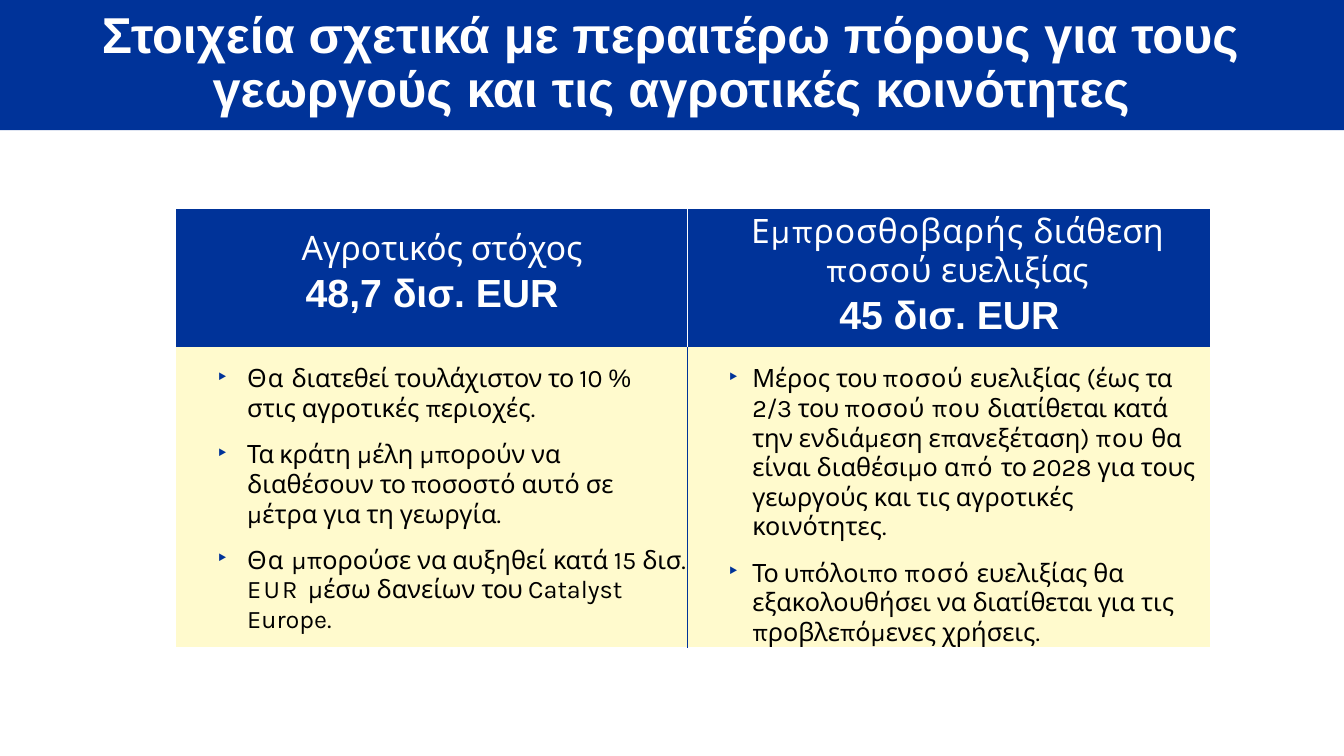
from itertools import groupby

from lxml import etree
from pptx import Presentation
from pptx.dml.color import RGBColor
from pptx.enum.shapes import MSO_SHAPE
from pptx.enum.text import MSO_ANCHOR, MSO_AUTO_SIZE, PP_ALIGN
from pptx.oxml.ns import qn
from pptx.util import Pt

RECTANGLE = MSO_SHAPE.RECTANGLE
TOP = MSO_ANCHOR.TOP
NO_AUTOFIT = MSO_AUTO_SIZE.NONE
LEFT, CENTER = PP_ALIGN.LEFT, PP_ALIGN.CENTER

COLORS = {"blue": "003399", "cream": "FFFACD", "white": "FFFFFF", "black": "000000"}
HEADING_FONT, BODY_FONT = "Arial", "Karla"
NO_TABLE_STYLE = "{2D5ABB26-0587-4C30-8999-92F81FD0307C}"

# Letter spacing in points of single words set in the body font
TRACKING = {
    "Θα": 0.8, "Τα": -0.6, "Το": -0.7, "το": -0.8, "του": -0.5, "τα": -0.6,
    "τους": -0.2, "τη": -0.2, "την": -0.2, "κατά": -0.2, "2/3": -0.2,
    "ποσού": 0.5, "ποσό": 0.7, "που": 0.6, "από": 0.8, "διατίθεται": -0.3,
    "διατεθεί": -0.2, "τουλάχιστον": -0.2, "δισ.": -0.2, "EUR": 1.6,
    "Εμπροσθοβαρής": 0.7, "%": -0.5,
}

TITLE = ("Στοιχεία σχετικά με περαιτέρω πόρους για τους "
         "γεωργούς και τις αγροτικές κοινότητες")

RURAL_TARGET = [
    "Θα διατεθεί τουλάχιστον το 10 %",
    "στις αγροτικές περιοχές.",
    "Τα κράτη μέλη μπορούν να διαθέσουν το ποσοστό αυτό σε μέτρα για τη γεωργία.",
    "Θα μπορούσε να αυξηθεί κατά 15 δισ. EUR μέσω δανείων του Catalyst Europe.",
]
FLEXIBILITY_AMOUNT = [
    "Μέρος του ποσού ευελιξίας (έως τα 2/3 του ποσού που διατίθεται κατά την "
    "ενδιάμεση επανεξέταση) που θα είναι διαθέσιμο από το 2028 για τους γεωργούς "
    "και τις αγροτικές κοινότητες.",
    "Το υπόλοιπο ποσό ευελιξίας θα εξακολουθήσει να διατίθεται για τις "
    "προβλεπόμενες χρήσεις.",
]


def rgb(color):
    return RGBColor.from_string(COLORS[color])


class SlideBuilder:
    def __init__(self, width, height):
        self.deck = Presentation()
        self.deck.slide_width, self.deck.slide_height = Pt(width), Pt(height)
        self.slide = self.deck.slides.add_slide(self.deck.slide_layouts[5])

    def band(self, width, height):
        """Add a blue band along the top, behind everything else."""
        band = self.slide.shapes.add_shape(RECTANGLE, 0, 0, Pt(width), Pt(height))
        band.shadow.inherit = False
        band.fill.solid()
        band.fill.fore_color.rgb = rgb("blue")
        band.line.fill.background()
        self.slide.shapes._spTree.insert(2, band._element)

    def title(self, text, left, top, width, height):
        title = self.slide.shapes.title
        title.left, title.top = Pt(left), Pt(top)
        title.width, title.height = Pt(width), Pt(height)
        frame = title.text_frame
        frame.word_wrap, frame.auto_size = True, NO_AUTOFIT
        frame.vertical_anchor = TOP
        frame.margin_left = frame.margin_right = frame.margin_bottom = 0
        frame.margin_top = Pt(5.8)
        self.paragraph(frame, text, 36, "white", HEADING_FONT,
                       margin=137.5, indent=-79.2, line=38.9)

    def table(self, left, top, widths, heights):
        frame = self.slide.shapes.add_table(
            len(heights), len(widths), Pt(left), Pt(top),
            Pt(sum(widths)), Pt(sum(heights)))
        table = frame.table
        table.first_row = table.horz_banding = False
        table._tbl.tblPr.find(qn("a:tableStyleId")).text = NO_TABLE_STYLE
        for column, width in zip(table.columns, widths):
            column.width = Pt(width)
        for row, height in zip(table.rows, heights):
            row.height = Pt(height)
        return table

    def cell(self, cell, fill, margin_top, borders):
        """Format a cell; borders maps side letters, in L R T B order, to colours."""
        cell.margin_left = cell.margin_right = cell.margin_bottom = 0
        cell.margin_top = Pt(margin_top)
        cell.vertical_anchor = TOP
        properties = cell._tc.get_or_add_tcPr()
        for side, color in borders.items():
            line = etree.SubElement(properties, qn(f"a:ln{side}"), w=str(Pt(1)))
            solid = etree.SubElement(line, qn("a:solidFill"))
            etree.SubElement(solid, qn("a:srgbClr"), val=COLORS[color])
        cell.fill.solid()
        cell.fill.fore_color.rgb = rgb(fill)
        return cell.text_frame

    def paragraph(self, frame, text, size, color, font, margin=0, indent=0,
                  line=None, before=0, align=LEFT, bullet=False):
        first = frame.paragraphs[0]
        paragraph = frame.add_paragraph() if first.runs else first
        properties = paragraph._p.get_or_add_pPr()
        properties.set("marL", str(Pt(margin)))
        properties.set("indent", str(Pt(indent)))
        if bullet:
            bullet_color = etree.SubElement(properties, qn("a:buClr"))
            etree.SubElement(bullet_color, qn("a:srgbClr"), val=COLORS["blue"])
            etree.SubElement(properties, qn("a:buSzPct"), val="83000")
            etree.SubElement(properties, qn("a:buChar"), char="‣")
        paragraph.alignment = align
        paragraph.space_before = Pt(before)
        paragraph.line_spacing = Pt(line) if line else 1.0
        self.runs(paragraph, text, size, color, font)

    def runs(self, paragraph, text, size, color, font):
        """Split the text into runs of equal font and letter spacing."""
        def style(word):
            if font == HEADING_FONT:
                return font, 0
            return HEADING_FONT if word == "%" else font, TRACKING.get(word, 0)

        groups = [(key, " ".join(words)) for key, words in groupby(text.split(), style)]
        for number, ((face, tracking), words) in enumerate(groups, 1):
            run = paragraph.add_run()
            run.text = words if number == len(groups) else words + " "
            run.font.name, run.font.size = face, Pt(size)
            run.font.bold = font == HEADING_FONT
            run.font.color.rgb = rgb(color)
            run._r.get_or_add_rPr().set("spc", str(round(tracking * 100)))

    def bullets(self, frame, items, margin, hanging, continuations=()):
        """Add a bulleted list; continuations are items that carry no bullet."""
        for number, item in enumerate(items):
            bullet = item not in continuations
            self.paragraph(frame, item, 18, "black", BODY_FONT, margin=margin,
                           indent=-hanging if bullet else 0, bullet=bullet,
                           before=12 if bullet and number else 0)


def main():
    builder = SlideBuilder(960, 540)
    builder.band(960, 92.9)
    builder.title(TITLE, 14.4, 0.7, 931, 84.2)

    table = builder.table(125.5, 149, widths=(365.8, 373.7), heights=(98.6, 213.8))
    rural_head = builder.cell(table.cell(0, 0), "blue", 14.4,
                              {"L": "white", "R": "white", "T": "white"})
    builder.paragraph(rural_head, "Αγροτικός στόχος", 24, "white", BODY_FONT,
                      margin=90, line=28.7)
    builder.paragraph(rural_head, "48,7 δισ. EUR", 28, "white", HEADING_FONT,
                      margin=92.9, line=33.5)

    flexibility_head = builder.cell(table.cell(0, 1), "blue", 2.9,
                                    {"L": "white", "R": "white", "T": "white"})
    builder.paragraph(flexibility_head, "Εμπροσθοβαρής διάθεση ποσού ευελιξίας", 24,
                      "white", BODY_FONT, margin=11.5, align=CENTER)
    builder.paragraph(flexibility_head, "45 δισ. EUR", 28, "white", HEADING_FONT,
                      line=33.5, align=CENTER)

    rural_body = builder.cell(table.cell(1, 0), "cream", 13,
                              {"L": "white", "R": "blue", "B": "white"})
    builder.bullets(rural_body, RURAL_TARGET, 51.1, 22.3,
                    continuations=RURAL_TARGET[1:2])
    flexibility_body = builder.cell(table.cell(1, 1), "cream", 13,
                                    {"L": "blue", "R": "white", "B": "white"})
    builder.bullets(flexibility_body, FLEXIBILITY_AMOUNT, 46.1, 18)

    builder.deck.save("out.pptx")


if __name__ == "__main__":
    main()
